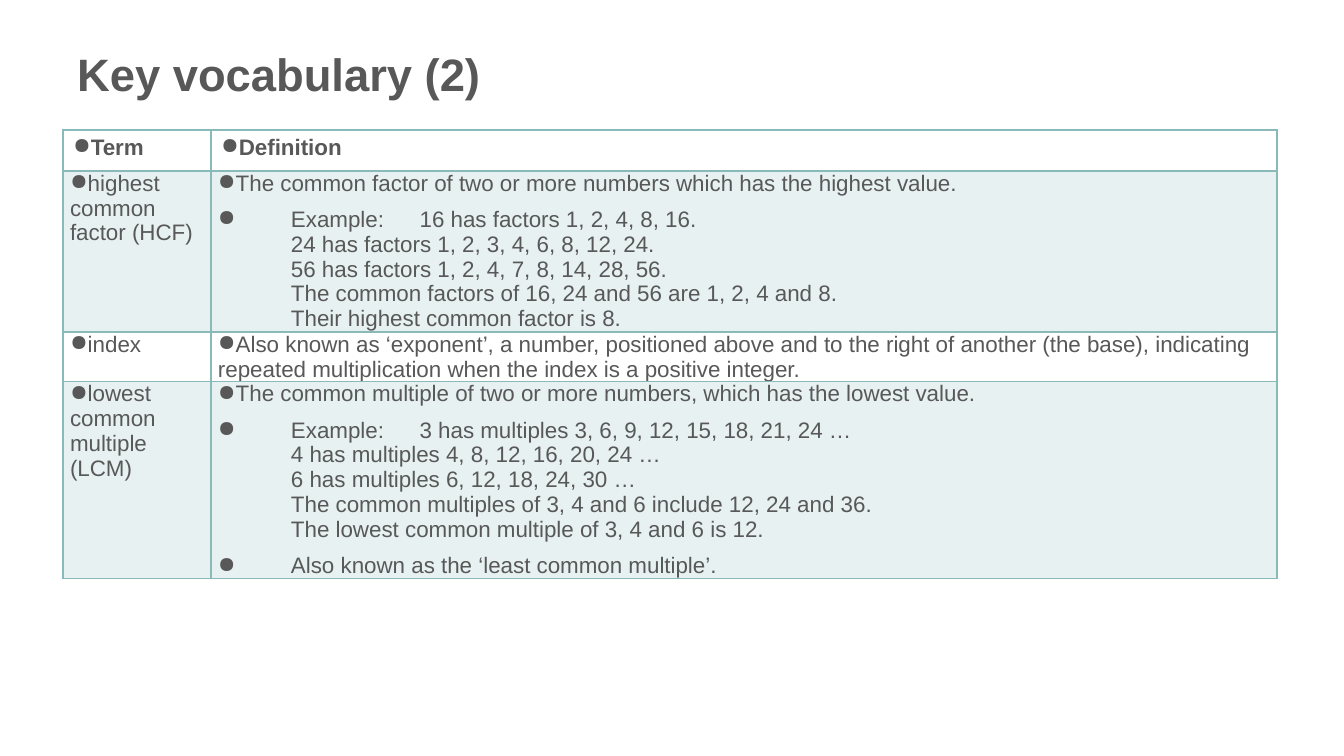
from lxml import etree
from pptx import Presentation
from pptx.dml.color import RGBColor
from pptx.enum.text import MSO_ANCHOR, PP_ALIGN
from pptx.oxml.ns import qn
from pptx.util import Pt

TOP, LEFT = MSO_ANCHOR.TOP, PP_ALIGN.LEFT

# Content: each cell is a list of paragraphs
TITLE = "Key vocabulary (2)"
ROWS = [
    (["Term"], ["Definition"]),
    (["highest common factor (HCF)"],
     ["The common factor of two or more numbers which has the highest value.",
      "Example:\t16 has factors 1, 2, 4, 8, 16.\n"
      "24 has factors 1, 2, 3, 4, 6, 8, 12, 24.\n"
      "56 has factors 1, 2, 4, 7, 8, 14, 28, 56.\n"
      "The common factors of 16, 24 and 56 are 1, 2, 4 and 8.\n"
      "Their highest common factor is 8."]),
    (["index"],
     ["Also known as ‘exponent’, a number, positioned above and to the right of "
      "another (the base), indicating repeated multiplication when the index is "
      "a positive integer."]),
    (["lowest common multiple (LCM)"],
     ["The common multiple of two or more numbers, which has the lowest value.",
      "Example:\t3 has multiples 3, 6, 9, 12, 15, 18, 21, 24 …\n"
      "4 has multiples 4, 8, 12, 16, 20, 24 …\n"
      "6 has multiples 6, 12, 18, 24, 30 …\n"
      "The common multiples of 3, 4 and 6 include 12, 24 and 36.\n"
      "The lowest common multiple of 3, 4 and 6 is 12.",
      "Also known as the ‘least common multiple’."]),
]
COLORS = {"text": "585858", "teal": "8AB9B9", "white": "FFFFFF"}
FONT, TITLE_PT, BODY_PT = "Arial", 32.4, 16

# Layout in px
SLIDE = (1344, 756)
TITLE_BOX = (67, 47, 1210, 108)
TABLE_AT = (63, 130)
COL_WIDTHS = (148, 1066)
ROW_HEIGHTS = (41, 161, 49, 197)
CELL_INSET, HANGING = 7, 73


def px(n):
    return round(n * 914400 / 100.8)


def style(font, size, bold):
    font.name, font.size, font.bold = FONT, Pt(size), bold
    font.color.rgb = RGBColor.from_string(COLORS["text"])


def write_cell(cell, texts, header):
    tf = cell.text_frame
    for i, text in enumerate(texts):
        p = tf.add_paragraph() if i else tf.paragraphs[0]
        p.text = text
        pPr = p._p.get_or_add_pPr()
        indent = px(HANGING) if i else 0
        pPr.set("marL", str(indent))
        pPr.set("indent", str(-indent))
        etree.SubElement(pPr, qn("a:buChar"), char="●")
        if i:
            p.space_before = Pt(4)
        if not header:
            p.space_after = Pt(4)
        for r in p.runs:
            style(r.font, BODY_PT, header)
        for br in p._p.findall(qn("a:br")):
            etree.SubElement(br, qn("a:rPr"), sz=str(BODY_PT * 100))


def fill_cell(cell, tinted):
    cell.fill.solid()
    cell.fill.fore_color.rgb = RGBColor.from_string(COLORS["teal" if tinted else "white"])
    if tinted:
        color = cell._tc.tcPr.find(qn("a:solidFill"))[0]
        etree.SubElement(color, qn("a:alpha"), val="20000")


def border_cell(cell, row):
    widths = {"L": 1, "R": 1, "T": 2 if row == 1 else 1, "B": 2 if row == 0 else 1}
    for i, (side, width) in enumerate(widths.items()):
        ln = etree.Element(qn("a:ln" + side), w=str(Pt(width)))
        fill = etree.SubElement(ln, qn("a:solidFill"))
        etree.SubElement(fill, qn("a:srgbClr"), val=COLORS["teal"])
        cell._tc.tcPr.insert(i, ln)


prs = Presentation()
prs.slide_width, prs.slide_height = map(px, SLIDE)
s = prs.slides.add_slide(prs.slide_layouts[5])

# Title
title = s.shapes.title
title.left, title.top, title.width, title.height = map(px, TITLE_BOX)
tf = title.text_frame
tf.text = TITLE
tf.word_wrap = True
tf.vertical_anchor = TOP
p = tf.paragraphs[0]
p.alignment, p.line_spacing = LEFT, 0.9
style(p.runs[0].font, TITLE_PT, True)

# Vocabulary table
frame = s.shapes.add_table(len(ROWS), len(COL_WIDTHS), *map(px, TABLE_AT),
                           px(sum(COL_WIDTHS)), px(sum(ROW_HEIGHTS)))
table = frame.table
table.horz_banding = False
for column, width in zip(table.columns, COL_WIDTHS):
    column.width = px(width)
for row, (height, texts) in enumerate(zip(ROW_HEIGHTS, ROWS)):
    table.rows[row].height = px(height)
    for col, paragraphs in enumerate(texts):
        cell = table.cell(row, col)
        if row:
            cell.margin_left = cell.margin_right = px(CELL_INSET)
            cell.margin_top = cell.margin_bottom = 0
        write_cell(cell, paragraphs, header=row == 0)
        fill_cell(cell, tinted=row % 2 == 1)
        border_cell(cell, row)

prs.save("out.pptx")
